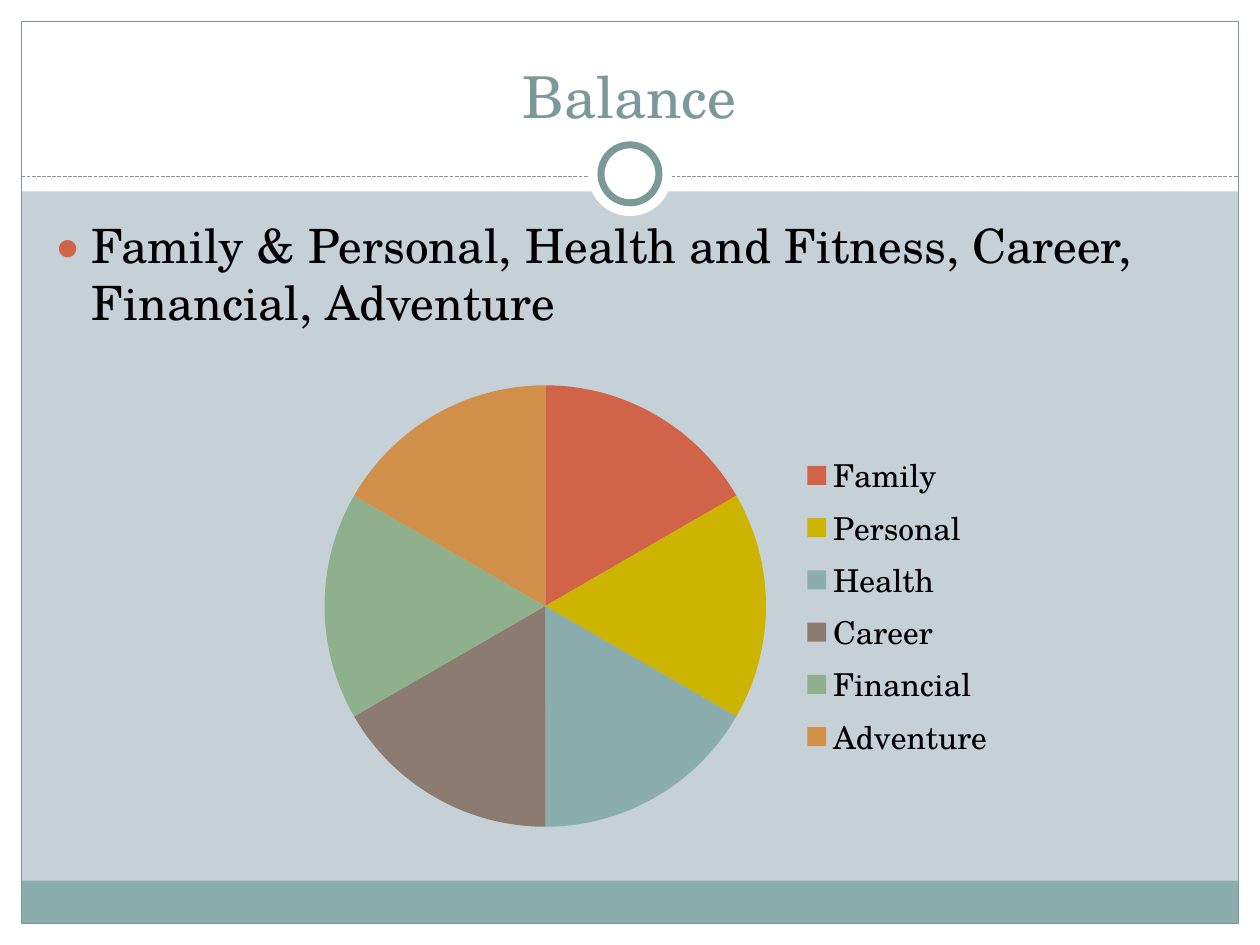
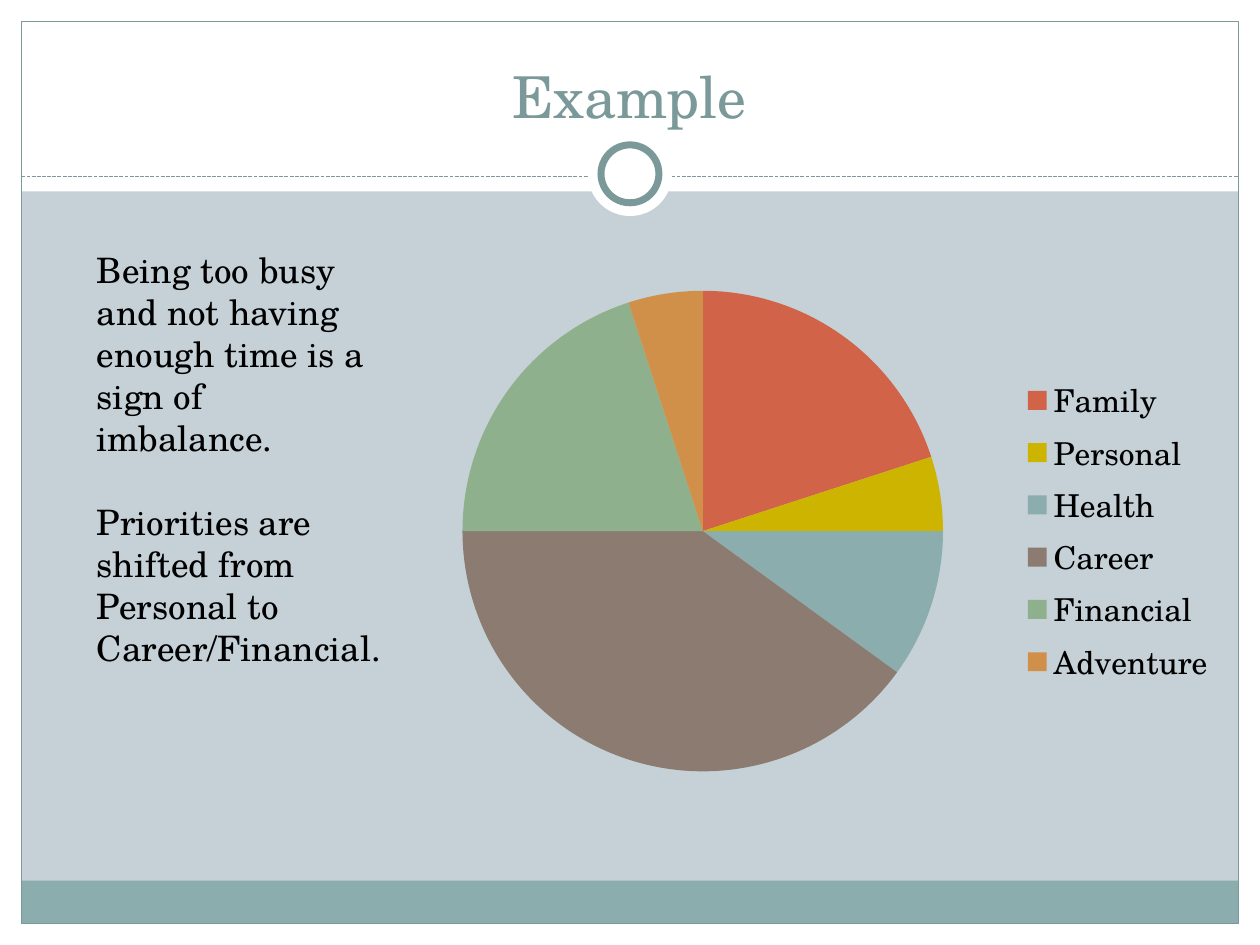
from lxml.etree import SubElement
from pptx import Presentation
from pptx.chart.data import CategoryChartData
from pptx.dml.color import RGBColor
from pptx.enum.chart import XL_CHART_TYPE, XL_LEGEND_POSITION
from pptx.enum.dml import MSO_LINE
from pptx.enum.shapes import MSO_CONNECTOR, MSO_SHAPE
from pptx.enum.text import MSO_ANCHOR, PP_ALIGN
from pptx.oxml.ns import qn
from pptx.util import Inches, Pt

# Content
AREAS = ["Family", "Personal", "Health", "Career", "Financial", "Adventure"]
SLIDES = [
    {
        "title": "Balance",
        "paragraphs": ["Family & Personal, Health and Fitness, Career, Financial, Adventure"],
        "text_place": (0.33, 1.67, 9.3, 5),
        "text_format": {"size": 27, "bullet": "●", "space_before": 5.4},
        "shares": [17] * len(AREAS),
        "chart_place": (2.33, 2.92, 5.67, 3.78),
    },
    {
        "title": "Example",
        "paragraphs": [
            "Being too busy and not having enough time is a sign of imbalance.",
            "Priorities are shifted from Personal to Career/Financial.",
        ],
        "text_place": (0.67, 1.92, 2.5, 3.13),
        "text_format": {"size": 20, "gap": 24},
        "shares": [20, 5, 10, 40, 20, 5],
        "chart_place": (3.08, 2.17, 6.67, 4.09),
    },
]

# Style
FONT = "TeX Gyre Schola"
WHITE = RGBColor(0xFF, 0xFF, 0xFF)
BLACK = RGBColor(0x00, 0x00, 0x00)
BACKGROUND = RGBColor(0xC5, 0xD1, 0xD7)
TEAL = RGBColor(0x7C, 0x99, 0x9A)
RED = RGBColor(0xD1, 0x63, 0x49)
GOLD = RGBColor(0xCC, 0xB4, 0x00)
AQUA = RGBColor(0x8C, 0xAD, 0xAE)
BROWN = RGBColor(0x8C, 0x7B, 0x70)
GREEN = RGBColor(0x8F, 0xB0, 0x8C)
ORANGE = RGBColor(0xD1, 0x90, 0x49)
SLICE_COLOURS = [RED, GOLD, AQUA, BROWN, GREEN, ORANGE]

# Frame measures, in inches
WIDTH, HEIGHT = 10, 7.5
MARGIN = 0.17
INNER_WIDTH = WIDTH - 2 * MARGIN
HEADER_HEIGHT = 1.52
FOOTER_HEIGHT = 0.34
RULE_Y = 1.4
RING_Y = 1.38
TITLE_PLACE = (0.33, 0.25, 9.33, 0.83)


def inches(*lengths):
    return [Inches(length) for length in lengths]


def add_figure(page, kind, place, fill=None, line=None, line_width=0.75):
    figure = page.shapes.add_shape(kind, *inches(*place))
    figure.shadow.inherit = False
    if fill is None:
        figure.fill.background()
    else:
        figure.fill.solid()
        figure.fill.fore_color.rgb = fill
    if line is None:
        figure.line.fill.background()
    else:
        figure.line.color.rgb = line
        figure.line.width = Pt(line_width)


def add_disc(page, diameter, **style):
    place = ((WIDTH - diameter) / 2, RING_Y - diameter / 2, diameter, diameter)
    add_figure(page, MSO_SHAPE.OVAL, place, **style)


def add_bullet(para, symbol):
    properties = para._p.get_or_add_pPr()
    properties.set("marL", str(Inches(0.3)))
    properties.set("indent", str(-Inches(0.3)))
    colour = SubElement(properties, qn("a:buClr"))
    SubElement(colour, qn("a:srgbClr"), val=str(RED))
    SubElement(properties, qn("a:buSzPct"), val="85000")
    SubElement(properties, qn("a:buFont"), typeface=FONT)
    SubElement(properties, qn("a:buChar"), char=symbol)


def add_text(page, paragraphs, place, size, colour=BLACK, align=PP_ALIGN.LEFT,
             anchor=MSO_ANCHOR.TOP, bullet=None, space_before=0, gap=0):
    frame = page.shapes.add_textbox(*inches(*place)).text_frame
    frame.word_wrap = True
    frame.vertical_anchor = anchor
    for index, text in enumerate(paragraphs):
        para = frame.paragraphs[0] if index == 0 else frame.add_paragraph()
        para.alignment = align
        para.space_before = Pt(gap if index else space_before)
        if bullet:
            add_bullet(para, bullet)
        span = para.add_run()
        span.text = text
        span.font.name = FONT
        span.font.size = Pt(size)
        span.font.color.rgb = colour


def add_frame(page):
    page.background.fill.solid()
    page.background.fill.fore_color.rgb = BACKGROUND
    bottom = HEIGHT - MARGIN
    # White edges and header, then the footer band
    bands = [
        ((0, bottom, WIDTH, MARGIN), WHITE),
        ((0, 0, WIDTH, HEADER_HEIGHT), WHITE),
        ((0, 0, MARGIN, HEIGHT), WHITE),
        ((WIDTH - MARGIN, 0, MARGIN, HEIGHT), WHITE),
        ((MARGIN, bottom - FOOTER_HEIGHT, INNER_WIDTH, FOOTER_HEIGHT), AQUA),
    ]
    for place, fill in bands:
        add_figure(page, MSO_SHAPE.RECTANGLE, place, fill=fill)
    border = (MARGIN, MARGIN, INNER_WIDTH, HEIGHT - 2 * MARGIN)
    add_figure(page, MSO_SHAPE.RECTANGLE, border, line=TEAL)
    # Dashed rule with the ring over its middle
    rule = page.shapes.add_connector(
        MSO_CONNECTOR.STRAIGHT, *inches(MARGIN, RULE_Y, WIDTH - MARGIN, RULE_Y))
    rule.line.color.rgb = TEAL
    rule.line.width = Pt(0.75)
    rule.line.dash_style = MSO_LINE.SQUARE_DOT
    SubElement(rule._element.spPr, qn("a:effectLst"))
    add_disc(page, 0.67, fill=WHITE)
    add_disc(page, 0.46, fill=WHITE, line=TEAL, line_width=4)


def add_pie(page, shares, place):
    data = CategoryChartData()
    data.categories = AREAS
    data.add_series("Series 1", shares)
    chart = page.shapes.add_chart(XL_CHART_TYPE.PIE, *inches(*place), data).chart
    chart.has_title = False
    chart.font.name = FONT
    chart.font.size = Pt(18)
    chart.font.color.rgb = BLACK
    chart.has_legend = True
    chart.legend.position = XL_LEGEND_POSITION.RIGHT
    chart.legend.include_in_layout = False
    plot = chart.plots[0]
    plot.vary_by_categories = True
    for index, colour in enumerate(SLICE_COLOURS):
        piece = plot.series[0].points[index].format
        piece.fill.solid()
        piece.fill.fore_color.rgb = colour
        piece.line.fill.background()


def main():
    deck = Presentation()
    deck.slide_width, deck.slide_height = inches(WIDTH, HEIGHT)
    for content in SLIDES:
        page = deck.slides.add_slide(deck.slide_layouts[6])
        add_frame(page)
        add_text(page, [content["title"]], TITLE_PLACE, size=33, colour=TEAL,
                 align=PP_ALIGN.CENTER, anchor=MSO_ANCHOR.BOTTOM)
        add_text(page, content["paragraphs"], content["text_place"], **content["text_format"])
        add_pie(page, content["shares"], content["chart_place"])
    deck.save("out.pptx")


if __name__ == "__main__":
    main()
